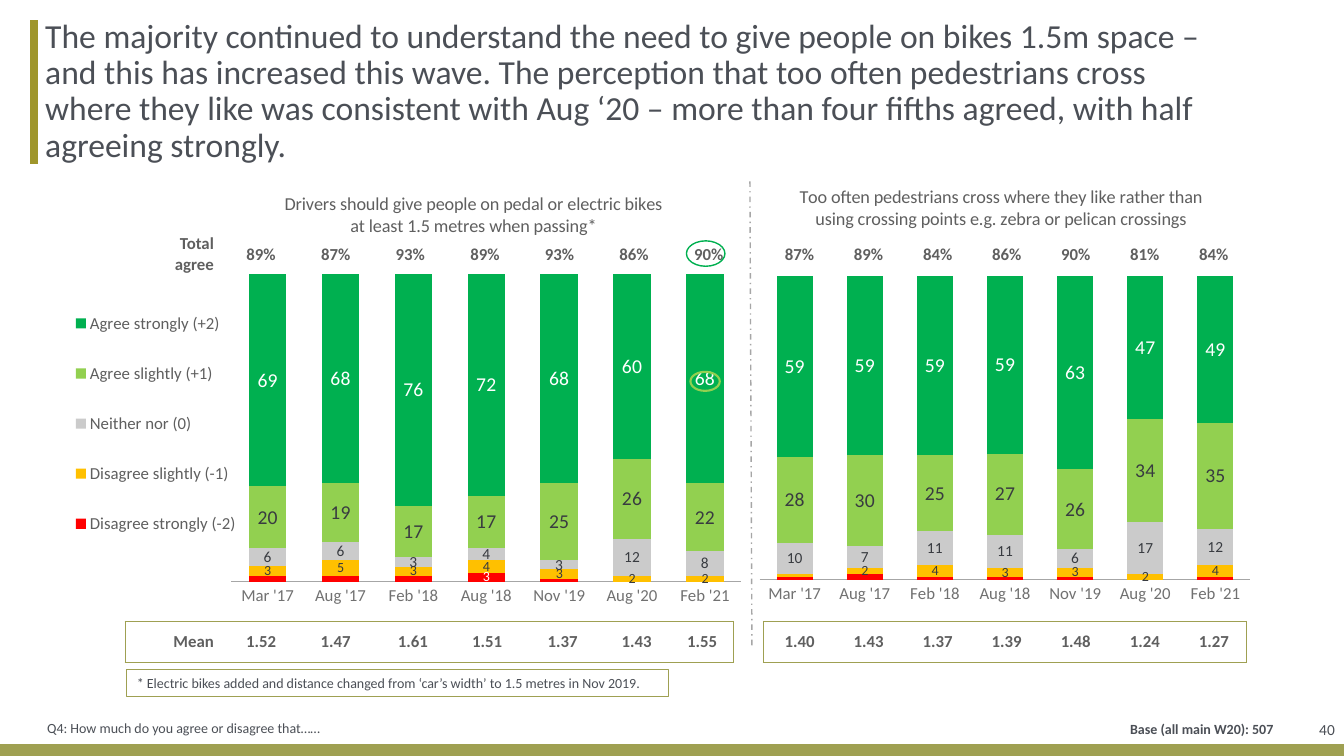
"""Build the slide on bike passing space and pedestrian crossing attitudes."""
from dataclasses import dataclass

from pptx import Presentation
from pptx import util as u
from pptx.chart.data import CategoryChartData
from pptx.dml.color import RGBColor
from pptx.enum import chart as ch
from pptx.enum import dml, shapes, text
from pptx.oxml import parse_xml
from pptx.oxml.ns import nsdecls, qn

HUES = {
    "ink": "4B4F56", "grey": "5F5F5F", "axis": "717171", "dark": "383B40",
    "olive": "9FA052", "moss": "9F962B", "rule": "A6A6A6", "white": "FFFFFF",
    "red": "FF0000", "amber": "FFC000", "silver": "CBCBCB",
    "lime": "92D050", "green": "00B050",
}
WAVES = ["Feb '21", "Aug '20", "Nov '19", "Aug '18", "Feb '18", "Aug '17", "Mar '17"]
Box = tuple[float, float, float, float]


@dataclass
class Level:
    name: str
    fill: str
    ink: str
    size: int


@dataclass
class Panel:
    box: Box
    title: list[str]
    spot: tuple[float, float]
    plot: Box
    rows: list[list[int]]
    mute: dict[int, list[int]]
    legend: Box | None = None


@dataclass
class Strip:
    left: float
    top: float
    cols: list[float]
    words: str
    lined: bool


@dataclass
class Note:
    box: Box
    words: str
    size: int = 10
    align: text.PP_ALIGN = text.PP_ALIGN.LEFT
    anchor: text.MSO_ANCHOR = text.MSO_ANCHOR.MIDDLE
    bold: bool = False
    inset: Box = (0.25, 0.13, 0.25, 0.13)
    space: float = 1.0
    edge: str = ""


@dataclass
class Ring:
    box: Box
    hue: str
    width: float


LEVELS = [
    Level("Disagree strongly (-2)", "red", "white", 10),
    Level("Disagree slightly (-1)", "amber", "dark", 10),
    Level("Neither nor (0)", "silver", "dark", 11),
    Level("Agree slightly (+1)", "lime", "dark", 14),
    Level("Agree strongly (+2)", "green", "white", 14),
]
PANELS = [
    Panel((0.94, 4.29, 18.11, 11.4),
          ["Drivers should give people on pedal or electric bikes",
           "at least 1.5 metres when passing*"],
          (0.34, 0.04), (0.27, 0.23, 0.71, 0.68),
          [[0, 0, 1, 3, 2, 2, 2], [2, 2, 3, 4, 3, 5, 3], [8, 12, 3, 4, 3, 6, 6],
           [22, 26, 25, 17, 17, 19, 20], [68, 60, 68, 72, 76, 68, 69]],
          {0: [0, 1, 2, 4, 5, 6]}, (0.05, 0.25, 0.23, 0.62)),
    Panel((18.75, 3.73, 13.16, 11.96),
          ["Too often pedestrians cross where they like rather than "
           "using crossing points e.g. zebra or pelican crossings"],
          (0.1, 0.07), (0.03, 0.27, 0.94, 0.64),
          [[1, 0, 1, 1, 1, 2, 1], [4, 2, 3, 3, 4, 2, 1], [12, 17, 6, 11, 11, 7, 10],
           [35, 34, 26, 27, 25, 30, 28], [49, 47, 63, 59, 59, 59, 59]],
          {0: list(range(7)), 1: [6]}),
]
STRIPS = [
    Strip(3.15, 15.65, [2.44, 1.88, 1.88, 2.01, 1.73, 2.08, 1.65, 1.65],
          "Mean|1.52|1.47|1.61|1.51|1.37|1.43|1.55", True),
    Strip(19.23, 15.65, [1.74] * 7, "1.40|1.43|1.37|1.39|1.48|1.24|1.27", True),
    Strip(3.38, 5.89, [2.21] + [1.88] * 7,
          "Total agree|89%|87%|93%|89%|93%|86%|90%", False),
    Strip(19.23, 5.89, [1.74] * 7, "87%|89%|84%|86%|90%|81%|84%", False),
]
NOTES = [
    Note((31.55, 17.65, 2.34, 1.47), "40", 11, text.PP_ALIGN.RIGHT),
    Note((0.94, 18.01, 20.0, 0.69), "Q4: How much do you agree or disagree that……"),
    Note((0.94, 0.51, 29.59, 3.61),
         "The majority continued to understand the need to give people on bikes 1.5m "
         "space – and this has increased this wave. The perception that too often "
         "pedestrians cross where they like was consistent with Aug ‘20 – more than "
         "four fifths agreed, with half agreeing strongly.",
         24, inset=(0.2, 0, 0, 0), space=0.9),
    Note((3.2, 16.87, 13.64, 0.69),
         "* Electric bikes added and distance changed from ‘car’s width’ to "
         "1.5 metres in Nov 2019.", edge="olive"),
    Note((22.33, 18.03, 10.01, 0.81), "Base (all main W20): 507",
         align=text.PP_ALIGN.RIGHT, anchor=text.MSO_ANCHOR.TOP, bold=True),
]
RINGS = [Ring((17.3, 6.07, 0.97, 0.64), "green", 1),
         Ring((17.4, 9.37, 0.74, 0.48), "lime", 1.5)]


def tint(hue: str) -> RGBColor:
    return RGBColor.from_string(HUES[hue])


def span(box) -> list[u.Cm]:
    return [u.Cm(side) for side in box]


def style(font, size: int, hue: str, bold: bool = False) -> None:
    font.name, font.size, font.bold = "Calibri", u.Pt(size), bold
    font.color.rgb = tint(hue)


def layout(spot, inner: bool = False):
    keys = "xywh"[:len(spot)]
    body = '<c:layoutTarget val="inner"/>' if inner else ""
    body += "".join(f'<c:{key}Mode val="edge"/>' for key in keys[:2])
    body += "".join(f'<c:{key} val="{val}"/>' for key, val in zip(keys, spot))
    return parse_xml(f'<c:layout {nsdecls("c")}><c:manualLayout>{body}'
                     "</c:manualLayout></c:layout>")


def place(node, spot, after: str = "", inner: bool = False) -> None:
    for old in node.findall(qn("c:layout")):
        node.remove(old)
    new = layout(spot, inner)
    if after:
        node.find(qn(after)).addnext(new)
    else:
        node.insert(0, new)


def draw_panel(slide, panel: Panel) -> None:
    data = CategoryChartData(number_format="#,##0")
    data.categories = WAVES
    for level, row in zip(LEVELS, panel.rows):
        data.add_series(level.name, row)
    chart = slide.shapes.add_chart(
        ch.XL_CHART_TYPE.COLUMN_STACKED_100, *span(panel.box), data).chart
    style(chart.font, 12, "ink")
    chart.has_title = True
    frame = chart.chart_title.text_frame
    frame.text = "\n".join(panel.title)
    for para in frame.paragraphs:
        style(para.font, 13, "grey")
    root = chart.element
    place(root.xpath("c:chart/c:title")[0], panel.spot, "c:tx")
    place(root.xpath("c:chart/c:plotArea")[0], panel.plot, inner=True)
    chart.has_legend = panel.legend is not None
    if panel.legend:
        chart.legend.position = ch.XL_LEGEND_POSITION.LEFT
        chart.legend.include_in_layout = False
        style(chart.legend.font, 12, "grey")
        place(root.xpath("c:chart/c:legend")[0], panel.legend, "c:legendPos")
    axis = chart.category_axis
    axis.reverse_order = True
    axis.major_tick_mark = ch.XL_TICK_MARK.NONE
    axis.format.line.color.rgb = tint("rule")
    style(axis.tick_labels.font, 12, "axis")
    chart.value_axis.visible = False
    chart.value_axis.has_major_gridlines = False
    plot = chart.plots[0]
    plot.gap_width, plot.overlap, plot.vary_by_categories = 95, 100, False
    nodes = root.xpath(".//c:ser")
    for num, (level, series) in enumerate(zip(LEVELS, plot.series)):
        series.format.fill.solid()
        series.format.fill.fore_color.rgb = tint(level.fill)
        labels = series.data_labels
        labels.show_value = True
        labels.number_format, labels.number_format_is_linked = "#,##0", False
        style(labels.font, level.size, level.ink)
        for pos, idx in enumerate(panel.mute.get(num, [])):
            nodes[num].find(qn("c:dLbls")).insert(pos, parse_xml(
                f'<c:dLbl {nsdecls("c")}><c:idx val="{idx}"/><c:delete val="1"/></c:dLbl>'))


def draw_strip(slide, strip: Strip) -> None:
    words = strip.words.split("|")
    table = slide.shapes.add_table(1, len(words), *span(
        (strip.left, strip.top, sum(strip.cols), 1.04))).table
    table.first_row = table.horz_banding = False
    table.rows[0].height = u.Cm(1.04)
    for num, word in enumerate(words):
        table.columns[num].width = u.Cm(strip.cols[num])
        cell = table.cell(0, num)
        cell.fill.background()
        cell.vertical_anchor = text.MSO_ANCHOR.MIDDLE
        (cell.margin_left, cell.margin_top,
         cell.margin_right, cell.margin_bottom) = span((0.3, 0, 0.2, 0))
        cell.text = word
        para = cell.text_frame.paragraphs[0]
        para.alignment = text.PP_ALIGN.RIGHT if word[0].isalpha() else text.PP_ALIGN.CENTER
        style(para.font, 12, "grey", True)
        edges = {"L": num == 0, "R": num == len(words) - 1, "T": True, "B": True}
        ink = f'<a:solidFill><a:srgbClr val="{HUES["olive"]}"/></a:solidFill>'
        for pos, (side, shown) in enumerate(edges.items()):
            fill = ink if strip.lined and shown else "<a:noFill/>"
            cell._tc.get_or_add_tcPr().insert(pos, parse_xml(
                f'<a:ln{side} {nsdecls("a")} w="6350">{fill}</a:ln{side}>'))


def draw_note(slide, note: Note) -> None:
    if note.edge:
        shape = draw_ring(slide, Ring(note.box, note.edge, 0.75), shapes.MSO_SHAPE.RECTANGLE)
    else:
        shape = slide.shapes.add_textbox(*span(note.box))
    frame = shape.text_frame
    frame.word_wrap, frame.vertical_anchor = True, note.anchor
    (frame.margin_left, frame.margin_top,
     frame.margin_right, frame.margin_bottom) = span(note.inset)
    frame.text = note.words
    para = frame.paragraphs[0]
    para.alignment, para.line_spacing = note.align, note.space
    style(para.font, note.size, "ink", note.bold)


def draw_ring(slide, ring: Ring, kind=shapes.MSO_SHAPE.OVAL):
    shape = slide.shapes.add_shape(kind, *span(ring.box))
    shape.shadow.inherit = False
    shape.fill.background()
    shape.line.color.rgb, shape.line.width = tint(ring.hue), u.Pt(ring.width)
    return shape


def draw_line(slide, ends: Box, hue: str, width: float):
    line = slide.shapes.add_connector(shapes.MSO_CONNECTOR.STRAIGHT, *span(ends))
    line.line.color.rgb, line.line.width = tint(hue), u.Pt(width)
    line._element.spPr.append(parse_xml(f'<a:effectLst {nsdecls("a")}/>'))
    return line


def main() -> None:
    deck = Presentation()
    deck.slide_width, deck.slide_height = span((33.87, 19.05))
    slide = deck.slides.add_slide(deck.slide_layouts[6])
    band = slide.shapes.add_shape(shapes.MSO_SHAPE.RECTANGLE, *span((0, 18.75, 33.87, 0.3)))
    band.shadow.inherit = False
    band.fill.solid()
    band.fill.fore_color.rgb = tint("olive")
    band.line.fill.background()
    draw_line(slide, (0.86, 0.51, 0.86, 4.14), "moss", 6)
    for panel in PANELS:
        draw_panel(slide, panel)
    split = draw_line(slide, (18.9, 4.57, 18.95, 16.33), "rule", 1)
    split.line.dash_style = dml.MSO_LINE.DASH_DOT
    for strip in STRIPS:
        draw_strip(slide, strip)
    for note in NOTES:
        draw_note(slide, note)
    for ring in RINGS:
        draw_ring(slide, ring)
    deck.save("out.pptx")


if __name__ == "__main__":
    main()
